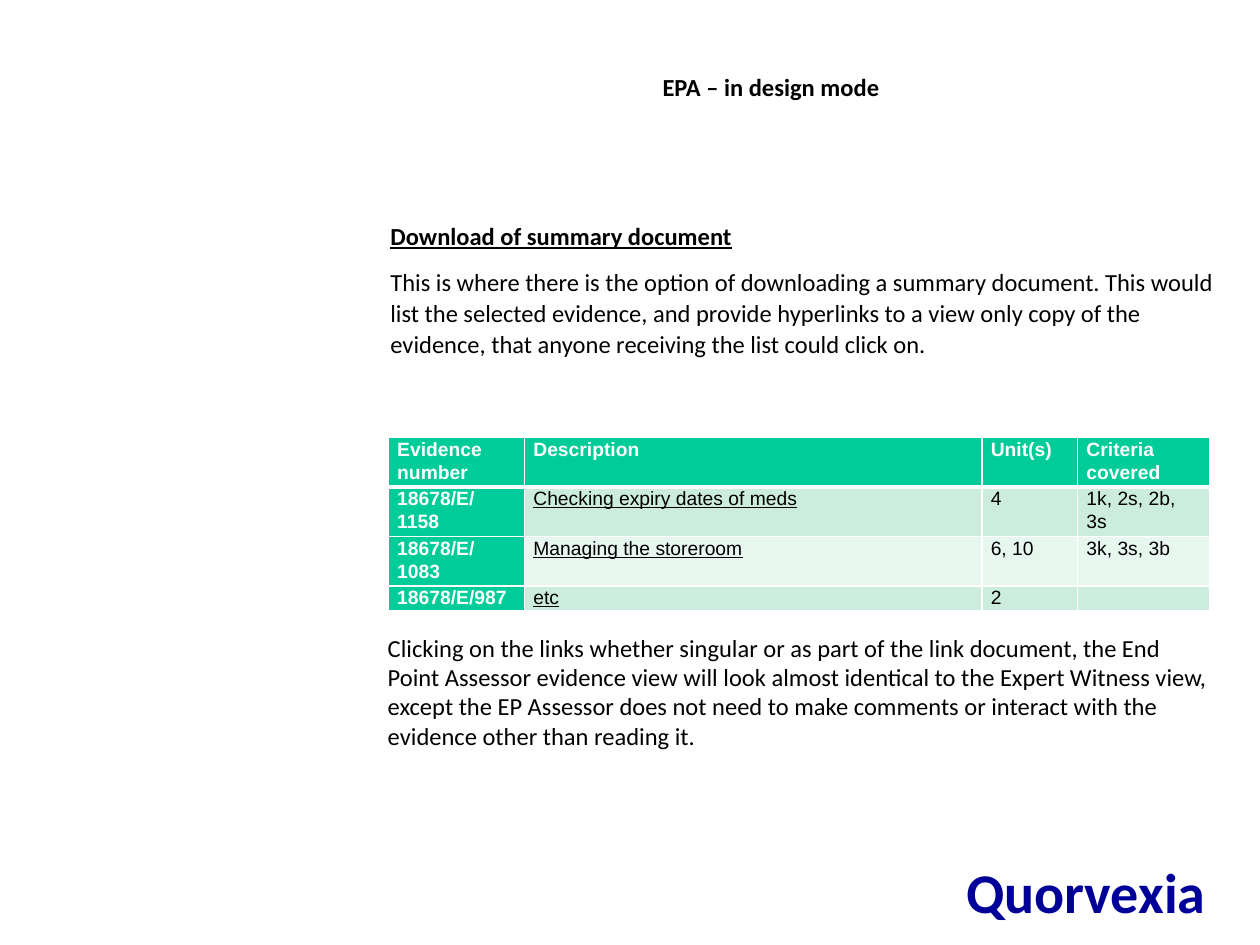
from lxml.etree import SubElement
from pptx import Presentation
from pptx.dml.color import RGBColor
from pptx.enum.text import MSO_ANCHOR, PP_ALIGN
from pptx.oxml.ns import qn
from pptx.util import Pt

BLACK = RGBColor(0x00, 0x00, 0x00)
WHITE = RGBColor(0xFF, 0xFF, 0xFF)
NAVY = RGBColor(0x00, 0x00, 0x99)
GREEN = RGBColor(0x00, 0xCC, 0x99)
MINT = RGBColor(0xCC, 0xEC, 0xDE)
PALE_MINT = RGBColor(0xE7, 0xF6, 0xEF)

LINE_SPACING = 1.07
COLUMN_WIDTHS = (77.8, 261.4, 54.7, 75.6)
ROW_HEIGHTS = (28, 28, 28, 14)
EVIDENCE = (
    ("Evidence number", "Description", "Unit(s)", "Criteria covered"),
    ("18678/E/1158", "Checking expiry dates of meds", "4", "1k, 2s, 2b, 3s"),
    ("18678/E/1083", "Managing the storeroom", "6, 10", "3k, 3s, 3b"),
    ("18678/E/987", "etc", "2", ""),
)
SUMMARY = (
    "This is where there is the option of downloading a summary document. "
    "This would list the selected evidence, and provide hyperlinks to a view "
    "only copy of the evidence, that anyone receiving the list could click on."
)
LINKS = (
    "Clicking on the links whether singular or as part of the link document, "
    "the End Point Assessor evidence view will look almost identical to the "
    "Expert Witness view, except the EP Assessor does not need to make comments "
    "or interact with the evidence other than reading it."
)


def format_runs(paragraph, face, size, color, bold=False, underline=False):
    """Apply one font style to every run of a paragraph."""
    for run in paragraph.runs:
        font = run.font
        font.name, font.size = face, Pt(size)
        font.bold, font.underline = bold, underline
        font.color.rgb = color


def fill_title(slide, product):
    """Place the product name in the title placeholder at the foot."""
    title = slide.shapes.title
    title.left, title.top = Pt(228), Pt(470)
    title.width, title.height = Pt(492), Pt(78)
    frame = title.text_frame
    frame.text = product
    frame.vertical_anchor = MSO_ANCHOR.MIDDLE
    frame.margin_right = Pt(31)
    paragraph = frame.paragraphs[0]
    paragraph.alignment = PP_ALIGN.RIGHT
    format_runs(paragraph, "Calibri", 32, NAVY, bold=True)


def add_text(slide, left, top, width, height, text, bold=False):
    """Add a wrapping text box and return its frame."""
    box = slide.shapes.add_textbox(Pt(left), Pt(top), Pt(width), Pt(height))
    frame = box.text_frame
    frame.word_wrap = True
    frame.text = text
    for paragraph in frame.paragraphs:
        format_runs(paragraph, "Calibri", 14, BLACK, bold)
    return frame


def add_summary(slide):
    """Add the underlined heading and its paragraph."""
    frame = add_text(slide, 216, 121.7, 487.5, 88,
                     f"Download of summary document\n{SUMMARY}")
    for paragraph in frame.paragraphs:
        paragraph.line_spacing = LINE_SPACING
        paragraph.space_after = Pt(8)
    format_runs(frame.paragraphs[0], "Calibri", 14, BLACK, bold=True, underline=True)


def set_borders(cell, bottom_width):
    """Draw white borders round a cell."""
    properties = cell._tc.get_or_add_tcPr()
    for side, width in (("L", 1), ("R", 1), ("T", 1), ("B", bottom_width)):
        line = SubElement(properties, qn(f"a:ln{side}"), w=str(Pt(width)))
        fill = SubElement(line, qn("a:solidFill"))
        SubElement(fill, qn("a:srgbClr"), val=str(WHITE))


def fill_cell(cell, text, row, column):
    """Write and format one cell by its place in the table."""
    is_label = row == 0 or column == 0
    set_borders(cell, 3 if row == 0 else 1)
    cell.fill.solid()
    cell.fill.fore_color.rgb = GREEN if is_label else (MINT if row % 2 else PALE_MINT)
    cell.margin_left = cell.margin_right = Pt(5)
    cell.margin_top = cell.margin_bottom = Pt(0)
    cell.text_frame.text = text
    paragraph = cell.text_frame.paragraphs[0]
    paragraph.line_spacing = LINE_SPACING
    if not text:
        paragraph._p.get_or_add_endParaRPr().set("sz", "1100")
    format_runs(paragraph, "Arial", 11, WHITE if is_label else BLACK,
                bold=is_label, underline=column == 1 and row > 0)


def add_evidence_table(slide):
    """Add the table of selected evidence."""
    table = slide.shapes.add_table(
        len(EVIDENCE), len(COLUMN_WIDTHS), Pt(222), Pt(250),
        Pt(sum(COLUMN_WIDTHS)), Pt(sum(ROW_HEIGHTS))).table
    for column, width in zip(table.columns, COLUMN_WIDTHS):
        column.width = Pt(width)
    for row, height in zip(table.rows, ROW_HEIGHTS):
        row.height = Pt(height)
    for row, entry in enumerate(EVIDENCE):
        for column, text in enumerate(entry):
            fill_cell(table.cell(row, column), text, row, column)


def main():
    """Build the slide and save it."""
    deck = Presentation()
    deck.slide_width, deck.slide_height = Pt(720), Pt(540)
    slide = deck.slides.add_slide(deck.slide_layouts[5])
    fill_title(slide, "Quorvexia")
    add_text(slide, 371.5, 37.5, 517, 24.5, "EPA – in design mode", bold=True)
    add_summary(slide)
    add_evidence_table(slide)
    add_text(slide, 214.5, 358, 487.5, 75, LINKS)
    deck.save("out.pptx")


if __name__ == "__main__":
    main()
